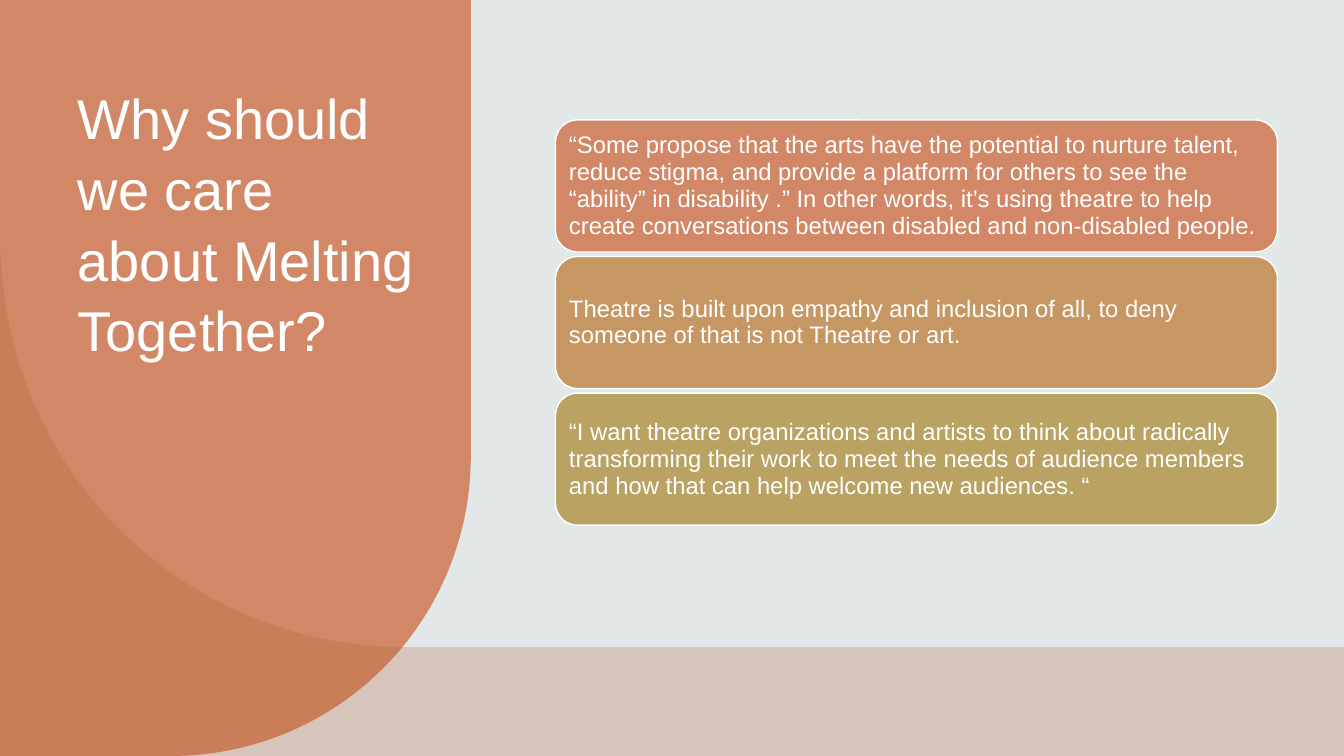
import math
import pptx
import pptx.util
import pptx.dml.color
import pptx.enum.shapes
import pptx.enum.text
import pptx.oxml
import pptx.oxml.ns

Inches = pptx.util.Inches
RGB = pptx.dml.color.RGBColor.from_string
THEME = {
    "font": "Arial", "title": 40, "body": 17,
    "bg": "E2E8E7", "text": "FFFFFF", "panel": "D28866", "band": "B55D35",
    "cards": ["D28866", "C79763", "BAA262"],
}


def write(tf, text, size, spacing, anchor, margin):
    tf.word_wrap = True
    tf.auto_size = pptx.enum.text.MSO_AUTO_SIZE.NONE
    tf.vertical_anchor = anchor
    tf.margin_left = tf.margin_right = Inches(margin)
    p = tf.paragraphs[0]
    p.alignment = pptx.enum.text.PP_ALIGN.LEFT
    p.line_spacing = spacing
    r = p.add_run()
    r.text = text
    r.font.name = THEME["font"]
    r.font.size = pptx.util.Pt(size)
    r.font.color.rgb = RGB(THEME["text"])


def arc(cx, cy, radius, start, end, steps=60):
    angles = [math.radians(start + (end - start) * i / steps) for i in range(steps + 1)]
    return [(cx + radius * math.cos(a), cy + radius * math.sin(a)) for a in angles]


prs = pptx.Presentation()
prs.slide_width, prs.slide_height = Inches(13.33), Inches(7.5)
s = prs.slides.add_slide(prs.slide_layouts[5])
s.background.fill.solid()
s.background.fill.fore_color.rgb = RGB(THEME["bg"])

# Rounded panel on the left, translucent band along the bottom
panel = [(0, 0), (4.67, 0)] + arc(1.7, 4.53, 2.97, 0, 90) + [(0, 7.5)]
band = [(0, 2.52)] + arc(4.01, 2.42, 4, 178.5, 90) + [(13.33, 6.42), (13.33, 7.5), (0, 7.5)]
for name, outline in (("panel", panel), ("band", band)):
    points = [(Inches(x), Inches(y)) for x, y in outline]
    fb = s.shapes.build_freeform(*points[0])
    fb.add_line_segments(points[1:], close=True)
    sp = fb.convert_to_shape()
    sp.shadow.inherit = False
    sp.fill.solid()
    sp.fill.fore_color.rgb = RGB(THEME[name])
    sp.line.fill.background()

# The band, drawn last, lets the panel show through
color = sp.fill._xPr.find(".//" + pptx.oxml.ns.qn("a:srgbClr"))
color.append(pptx.oxml.parse_xml(
    f'<a:alpha {pptx.oxml.ns.nsdecls("a")} val="25000"/>'))

# Title, brought in front of the panel
title = s.shapes.title
title.left, title.top, title.width, title.height = map(Inches, (0.67, 0.75, 3.67, 4.25))
write(title.text_frame, "Why should we care about Melting Together?",
      THEME["title"], 1.05, pptx.enum.text.MSO_ANCHOR.TOP, 0.1)
s.shapes._spTree.append(title._element)

# Stacked cards
texts = [
    "“Some propose that the arts have the potential to nurture talent, reduce stigma, and "
    "provide a platform for others to see the “ability” in disability .” In other words, "
    "it’s using theatre to help create conversations between disabled and non-disabled people.",
    "Theatre is built upon empathy and inclusion of all, to deny someone of that is not "
    "Theatre or art.",
    "“I want theatre organizations and artists to think about radically transforming their "
    "work to meet the needs of audience members and how that can help welcome new audiences. “",
]
for i, (text, fill) in enumerate(zip(texts, THEME["cards"])):
    sp = s.shapes.add_shape(pptx.enum.shapes.MSO_SHAPE.ROUNDED_RECTANGLE,
                            Inches(5.51), Inches(1.19 + 1.355 * i), Inches(7.16), Inches(1.31))
    sp.shadow.inherit = False
    sp.fill.solid()
    sp.fill.fore_color.rgb = RGB(fill)
    sp.line.color.rgb = RGB(THEME["text"])
    sp.line.width = pptx.util.Pt(1)
    write(sp.text_frame, text, THEME["body"], 0.94, pptx.enum.text.MSO_ANCHOR.MIDDLE, 0.07)

prs.save("out.pptx")
